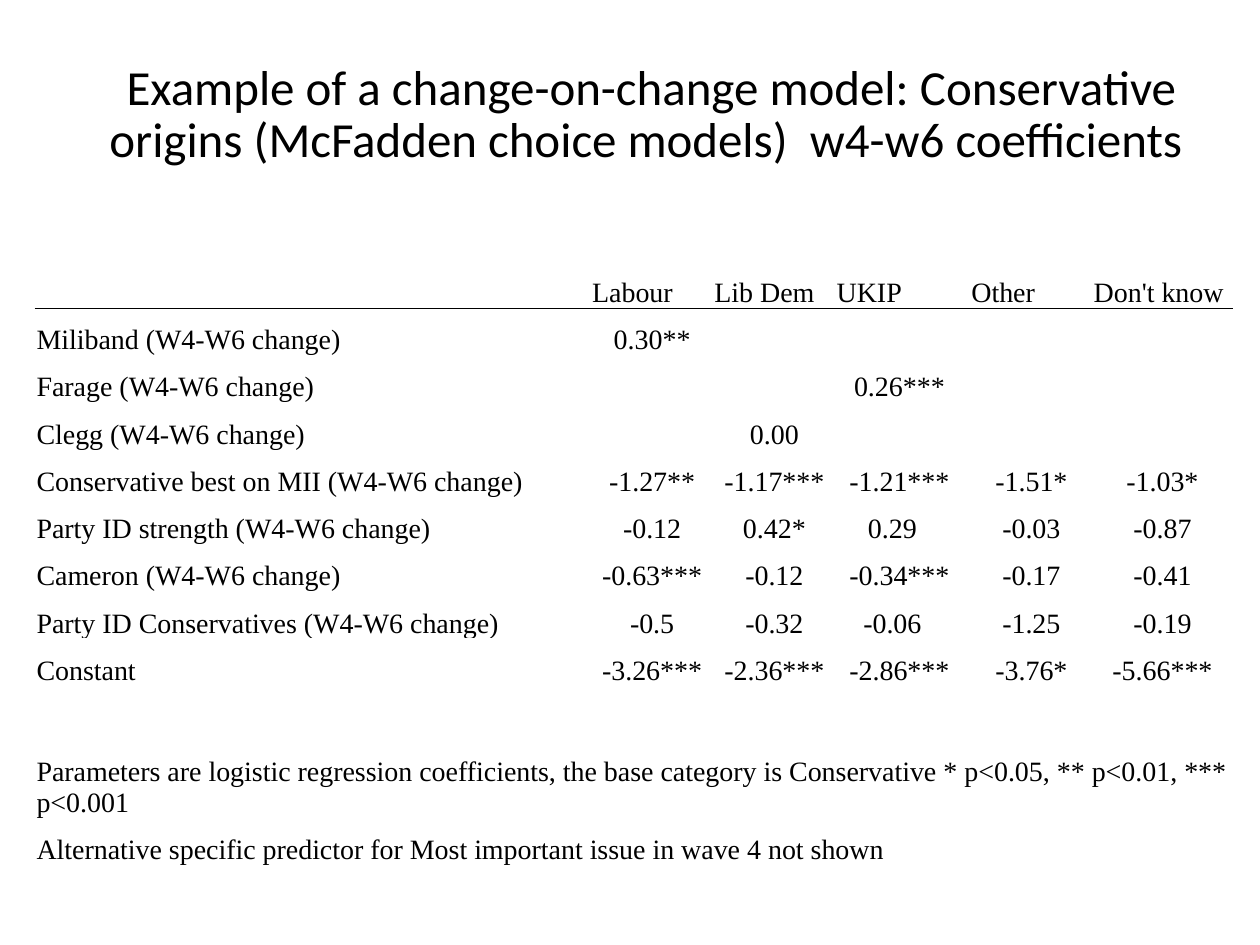
from dataclasses import dataclass

from lxml import etree
from pptx import Presentation
from pptx import util as u
from pptx.dml.color import RGBColor
from pptx.enum import text
from pptx.oxml import ns


@dataclass(frozen=True)
class Theme:
    ink: str = "000000"
    title_font: str = "Calibri"
    table_font: str = "Times New Roman"
    title_size: int = 28
    title_leading: int = 30
    table_size: int = 16
    rule_width: float = 0.5


PARTIES = ["Labour", "Lib Dem", "UKIP", "Other", "Don't know"]
COEFFICIENTS = [
    ("Miliband (W4-W6 change)", "0.30**", "", "", "", ""),
    ("Farage (W4-W6 change)", "", "", "0.26***", "", ""),
    ("Clegg (W4-W6 change)", "", "0.00", "", "", ""),
    ("Conservative best on MII (W4-W6 change)",
     "-1.27**", "-1.17***", "-1.21***", "-1.51*", "-1.03*"),
    ("Party ID strength (W4-W6 change)", "-0.12", "0.42*", "0.29", "-0.03", "-0.87"),
    ("Cameron (W4-W6 change)", "-0.63***", "-0.12", "-0.34***", "-0.17", "-0.41"),
    ("Party ID Conservatives (W4-W6 change)", "-0.5", "-0.32", "-0.06", "-1.25", "-0.19"),
    ("Constant", "-3.26***", "-2.36***", "-2.86***", "-3.76*", "-5.66***"),
]
NOTES = [
    ("Parameters are logistic regression coefficients, the base category is "
     "Conservative * p<0.05, ** p<0.01, *** p<0.001", 6),
    ("Alternative specific predictor for Most important issue in wave 4 not shown", 4),
]
COLUMN_WIDTHS = [317.5, 69.9, 69.9, 77, 69.9, 79.9]
ROW_HEIGHT, LONG_NOTE_HEIGHT = 27, 48.5
HEADER_ROW = 1
FIRST_NOTE_ROW = HEADER_ROW + len(COEFFICIENTS) + 2
ROW_COUNT = FIRST_NOTE_ROW + len(NOTES)
UKIP_COLUMN = 1 + PARTIES.index("UKIP")


class SlideBuilder:
    def __init__(self, slide, theme):
        self.slide = slide
        self.theme = theme

    def format_runs(self, paragraph, font, size):
        for run in paragraph.runs:
            run.font.name = font
            run.font.size = u.Pt(size)
            run.font.bold = False
            run.font.color.rgb = RGBColor.from_string(self.theme.ink)

    def title(self, wording, left, top, width, height):
        heading = self.slide.shapes.title
        heading.left, heading.top = u.Pt(left), u.Pt(top)
        heading.width, heading.height = u.Pt(width), u.Pt(height)
        frame = heading.text_frame
        frame.text = wording
        frame.word_wrap = True
        frame.auto_size = text.MSO_AUTO_SIZE.NONE
        frame.vertical_anchor = text.MSO_ANCHOR.MIDDLE
        paragraph = frame.paragraphs[0]
        paragraph.alignment = text.PP_ALIGN.CENTER
        paragraph.line_spacing = u.Pt(self.theme.title_leading)
        self.format_runs(paragraph, self.theme.title_font, self.theme.title_size)

    def table(self, row_heights, column_widths, left, top):
        """Add an unstyled grid whose cells are empty, clear and bottom-anchored."""
        grid = self.slide.shapes.add_table(
            len(row_heights), len(column_widths), u.Pt(left), u.Pt(top),
            u.Pt(sum(column_widths)), u.Pt(sum(row_heights))).table
        grid.first_row = grid.horz_banding = False
        for row, height in zip(grid.rows, row_heights):
            row.height = u.Pt(height)
        for column, width in zip(grid.columns, column_widths):
            column.width = u.Pt(width)
        for cell in grid.iter_cells():
            cell.fill.background()
            cell.vertical_anchor = text.MSO_ANCHOR.BOTTOM
            cell.margin_left = cell.margin_right = cell.margin_top = u.Pt(0.7)
            cell.margin_bottom = 0
        return grid

    def cell_text(self, cell, wording, centred=False):
        if not wording:
            return
        cell.text = wording
        paragraph = cell.text_frame.paragraphs[0]
        paragraph.alignment = text.PP_ALIGN.CENTER if centred else text.PP_ALIGN.LEFT
        self.format_runs(paragraph, self.theme.table_font, self.theme.table_size)

    def cell_rule(self, cell, side):
        """Draw a border on one side of a cell: lnT or lnB."""
        line = etree.Element(ns.qn(f"a:{side}"), w=str(u.Pt(self.theme.rule_width)))
        fill = etree.SubElement(line, ns.qn("a:solidFill"))
        etree.SubElement(fill, ns.qn("a:srgbClr"), val=self.theme.ink)
        cell._tc.get_or_add_tcPr().insert(0, line)


def main():
    presentation = Presentation()
    presentation.slide_width, presentation.slide_height = u.Pt(720), u.Pt(540)
    slide = presentation.slides.add_slide(presentation.slide_layouts[5])
    builder = SlideBuilder(slide, Theme())

    builder.title("Example of a change-on-change model: Conservative origins "
                  "(McFadden choice models)  w4-w6 coefficients ", 48.2, 20.9, 648, 90)

    heights = [ROW_HEIGHT] * ROW_COUNT
    heights[FIRST_NOTE_ROW] = LONG_NOTE_HEIGHT
    results = builder.table(heights, COLUMN_WIDTHS, 20.2, 122.4)

    for column, party in enumerate(PARTIES, 1):
        builder.cell_text(results.cell(HEADER_ROW, column), party)
    for row, (predictor, *values) in enumerate(COEFFICIENTS, HEADER_ROW + 1):
        builder.cell_text(results.cell(row, 0), predictor)
        for column, value in enumerate(values, 1):
            cell = results.cell(row, column)
            builder.cell_text(cell, value, centred=True)
            if column == UKIP_COLUMN:
                cell.margin_right = u.Pt(4.7 if "*" in value else 12.7)
    for row, (note, span) in enumerate(NOTES, FIRST_NOTE_ROW):
        results.cell(row, 0).merge(results.cell(row, span - 1))
        builder.cell_text(results.cell(row, 0), note)

    for column in range(len(COLUMN_WIDTHS)):
        builder.cell_rule(results.cell(HEADER_ROW, column), "lnB")
        builder.cell_rule(results.cell(HEADER_ROW + 1, column), "lnT")

    presentation.save("out.pptx")


if __name__ == "__main__":
    main()
